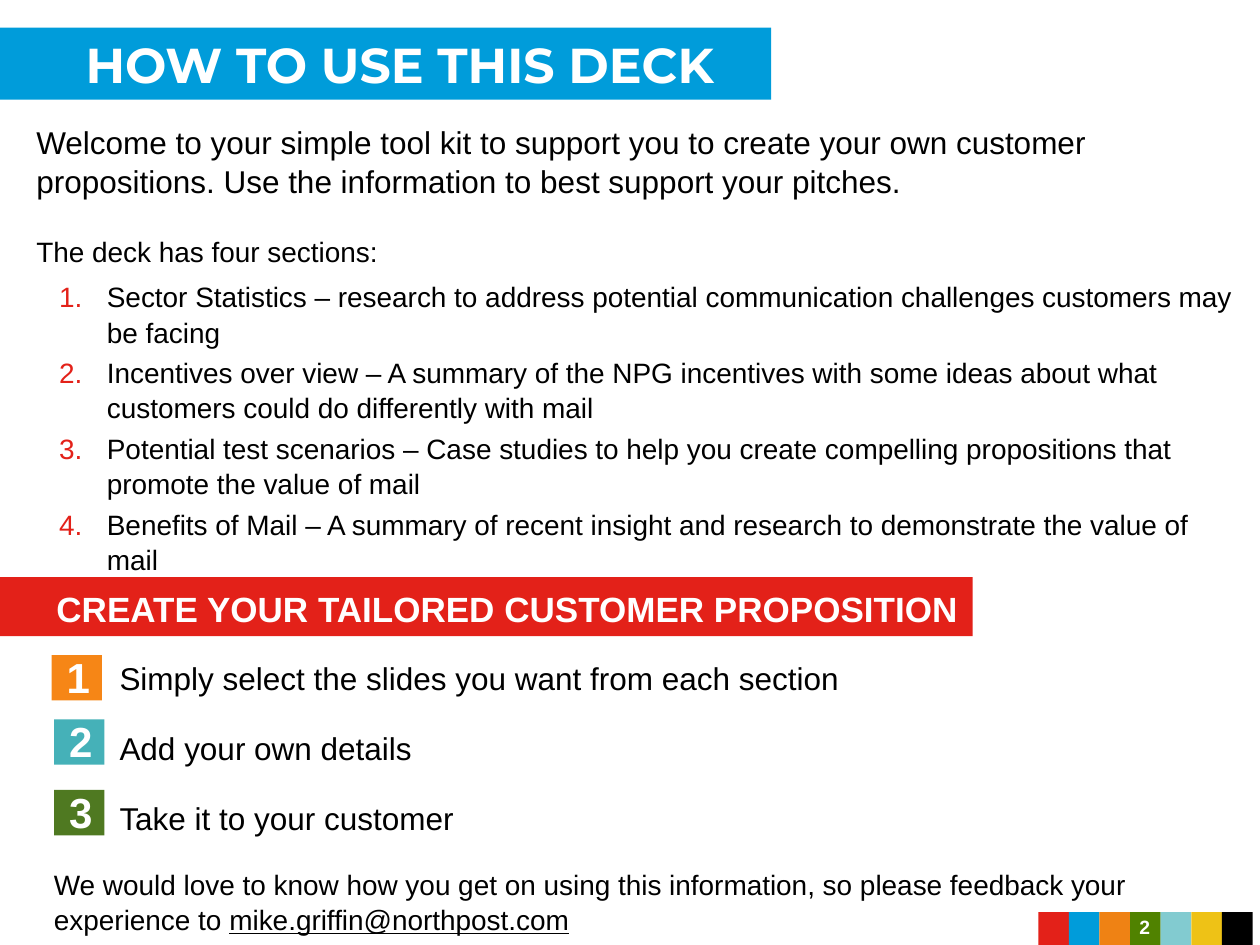
"""Build the slide that explains how to use the deck."""
import pptx
import pptx.util
import pptx.dml.color
import pptx.enum.shapes
import pptx.enum.text
import pptx.oxml.ns
from lxml import etree

Inches = pptx.util.Inches
Pt = pptx.util.Pt
ANCHOR = pptx.enum.text.MSO_ANCHOR
ALIGN = pptx.enum.text.PP_ALIGN

COLOURS = {
    "red": "E32119", "blue": "009CDA", "orange": "EF8214", "green": "508200",
    "aqua": "82CBD0", "yellow": "EEC216", "black": "000000", "white": "FFFFFF",
    "amber": "F68616", "teal": "45B1B8", "olive": "4F7921",
}
TITLE = "HOW TO USE THIS DECK"
WELCOME = ("Welcome to your simple tool kit to support you to create your own customer "
           "propositions. Use the information to best support your pitches.")
SECTIONS_INTRO = "The deck has four sections:"
SECTIONS = [
    "Sector Statistics – research to address potential communication challenges customers may be facing",
    "Incentives over view – A summary of the NPG incentives with some ideas about what customers could do differently with mail",
    "Potential test scenarios – Case studies to help you create compelling propositions that promote the value of mail",
    "Benefits of Mail – A summary of recent insight and research to demonstrate the value of mail",
]
BANNER = "CREATE YOUR TAILORED CUSTOMER PROPOSITION"
STEPS = [
    ("Simply select the slides you want from each section", "amber", 0.41, 5.2),
    ("Add your own details", "teal", 0.43, 5.71),
    ("Take it to your customer", "olive", 0.43, 6.27),
]
FEEDBACK = ("We would love to know how you get on using this information, "
            "so please feedback your experience to ")
EMAIL = "mike.griffin@northpost.com"
PAGE_NUMBER = "2"
STRIP = ["red", "blue", "orange", "green", "aqua", "yellow", "black"]
STRIP_LEFT, STRIP_PITCH = 8.24, 0.243

WHITE_BOLD = {"color": "white", "bold": True}
BODY_SPACING = {"line_spacing": 1.05}
STEP_SPACING = {"line_spacing": 1.5, "space_before": Pt(3), "space_after": Pt(4.5)}


def rgb(name):
    return pptx.dml.color.RGBColor.from_string(COLOURS[name])


def set_values(target, values):
    for name, value in values.items():
        setattr(target, name, value)


def add_rectangle(slide, colour, *box):
    shape = slide.shapes.add_shape(
        pptx.enum.shapes.MSO_SHAPE.RECTANGLE, *map(Inches, box))
    shape.shadow.inherit = False
    shape.fill.solid()
    shape.fill.fore_color.rgb = rgb(colour)
    shape.line.fill.background()


def add_text_box(slide, *box, anchor=ANCHOR.TOP):
    frame = slide.shapes.add_textbox(*map(Inches, box)).text_frame
    set_values(frame, {"word_wrap": True, "vertical_anchor": anchor})
    return frame


def add_run(paragraph, text, size, color="black", name="Arial", **font_values):
    run = paragraph.add_run()
    run.text = text
    run.font.color.rgb = rgb(color)
    set_values(run.font, {"size": Pt(size), "name": name, **font_values})


def add_paragraph(frame, text, size, spacing=None, **font_values):
    first = frame.paragraphs[0]
    paragraph = frame.add_paragraph() if first.runs else first
    set_values(paragraph, spacing or {})
    add_run(paragraph, text, size, **font_values)
    return paragraph


def number_paragraph(paragraph):
    properties = paragraph._p.get_or_add_pPr()
    properties.set("marL", str(Inches(0.56)))
    properties.set("indent", str(Inches(-0.38)))
    qn = pptx.oxml.ns.qn
    colour = etree.SubElement(properties, qn("a:buClr"))
    etree.SubElement(colour, qn("a:srgbClr"), val=COLOURS["red"])
    etree.SubElement(properties, qn("a:buFont"), typeface="+mj-lt")
    etree.SubElement(properties, qn("a:buAutoNum"), type="arabicPeriod")


def add_title(slide):
    title = slide.shapes.title
    set_values(title, {"left": Inches(-0.03), "top": Inches(0.22),
                       "width": Inches(6.15), "height": Inches(0.57)})
    title.fill.solid()
    title.fill.fore_color.rgb = rgb("blue")
    set_values(title.text_frame, {
        "margin_left": Inches(0.71), "word_wrap": False,
        "auto_size": pptx.enum.text.MSO_AUTO_SIZE.NONE,
        "vertical_anchor": ANCHOR.MIDDLE})
    add_paragraph(title.text_frame, TITLE, 28, {"alignment": ALIGN.LEFT},
                  name="Montserrat", **WHITE_BOLD)


def add_introduction(slide):
    frame = add_text_box(slide, 0.19, 0.91, 9.69, 3.62)
    add_paragraph(frame, WELCOME, 18, {**BODY_SPACING, "space_after": Pt(18.5)})
    add_paragraph(frame, SECTIONS_INTRO, 16, {**BODY_SPACING, "space_after": Pt(6)})
    for section in SECTIONS:
        number_paragraph(add_paragraph(
            frame, section, 16, {**BODY_SPACING, "space_after": Pt(3)}))


def add_steps(slide):
    add_rectangle(slide, "red", 0, 4.58, 7.72, 0.47)
    add_paragraph(add_text_box(slide, 0.35, 4.61, 7.37, 0.44), BANNER, 20, **WHITE_BOLD)
    frame = add_text_box(slide, 0.85, 5.03, 8.85, 1.08)
    for number, (text, colour, left, top) in enumerate(STEPS, 1):
        add_paragraph(frame, text, 18, STEP_SPACING)
        add_rectangle(slide, colour, left, top, 0.4, 0.36)
        label = add_text_box(slide, left + 0.02, top - 0.08, 0.43, 0.51)
        add_paragraph(label, str(number), 24, **WHITE_BOLD)


def add_footer(slide):
    frame = add_text_box(slide, 0.33, 6.82, 9.37, 0.57)
    paragraph = add_paragraph(frame, FEEDBACK, 16, BODY_SPACING)
    add_run(paragraph, EMAIL, 16, underline=True)
    for index, colour in enumerate(STRIP):
        add_rectangle(slide, colour, STRIP_LEFT + index * STRIP_PITCH, 7.24,
                      STRIP_PITCH, 0.26)
    frame = add_text_box(slide, 8.81, 7.16, 0.55, 0.4, anchor=ANCHOR.MIDDLE)
    add_paragraph(frame, PAGE_NUMBER, 11, {"alignment": ALIGN.CENTER}, **WHITE_BOLD)


def main():
    presentation = pptx.Presentation()
    set_values(presentation, {"slide_width": Inches(10), "slide_height": Inches(7.5)})
    slide = presentation.slides.add_slide(presentation.slide_layouts[5])
    add_title(slide)
    add_introduction(slide)
    add_steps(slide)
    add_footer(slide)
    presentation.save("out.pptx")


if __name__ == "__main__":
    main()
